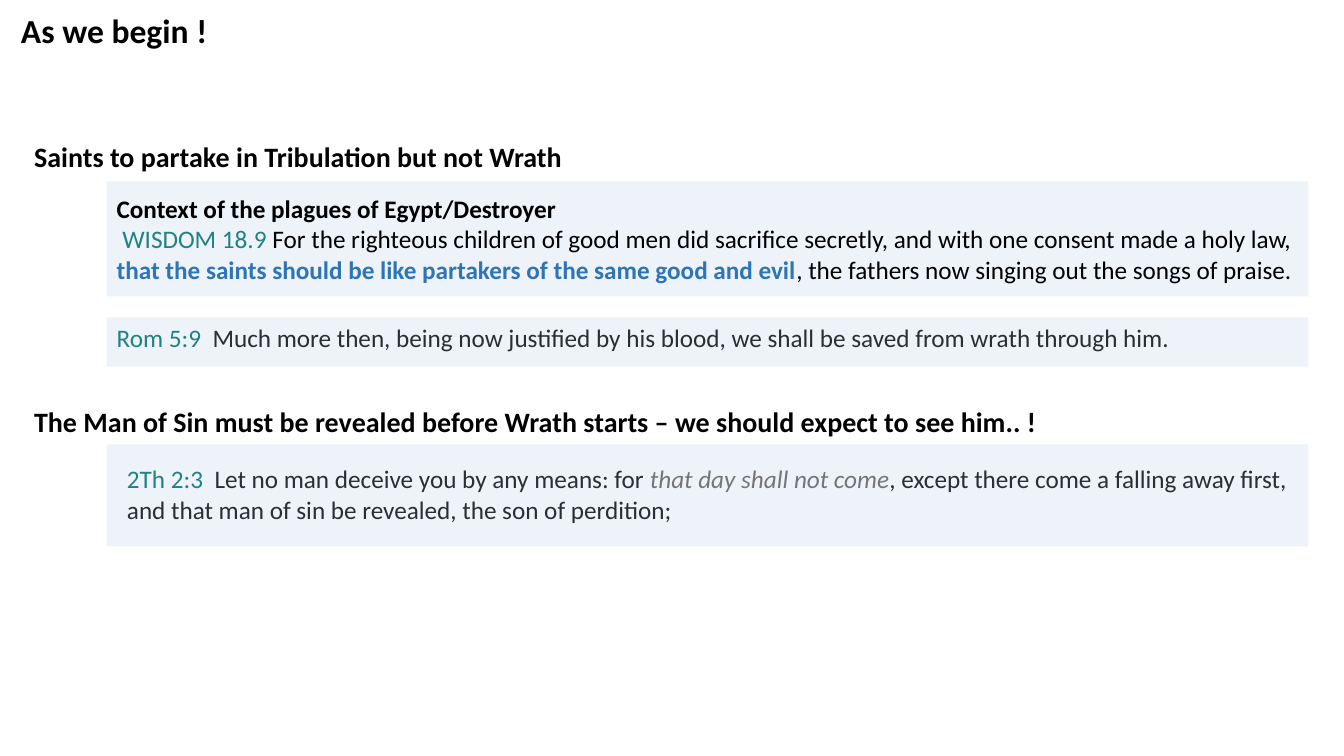
from pptx import Presentation
from pptx.dml.color import RGBColor
from pptx.enum.shapes import MSO_SHAPE
from pptx.util import Cm, Pt

RECT = MSO_SHAPE.RECTANGLE
FONT = "Calibri"
BLACK, TEAL, DARK = "000000", "218282", "292F33"
GREY, BLUE, PALE = "757575", "2E75B6", "EEF2F9"
BAND_LEFT, BAND_WIDTH = 2.69, 30.28


def color(code):
    return RGBColor.from_string(code)


def add_band(slide, top, height):
    """Pale panel behind a verse."""
    band = slide.shapes.add_shape(
        RECT, Cm(BAND_LEFT), Cm(top), Cm(BAND_WIDTH), Cm(height))
    band.shadow.inherit = False
    band.fill.solid()
    band.fill.fore_color.rgb = color(PALE)
    band.line.fill.background()


def add_run(para, text, size, code, bold=False, italic=False):
    run = para.add_run()
    run.text = text
    font = run.font
    font.name, font.size = FONT, Pt(size)
    font.bold, font.italic = bold, italic
    font.color.rgb = color(code)


def add_text(slide, left, top, width, height, lines, size=18, spacing=1.0):
    """Text box; each line is a list of (text, colour, bold, italic) runs."""
    box = slide.shapes.add_textbox(Cm(left), Cm(top), Cm(width), Cm(height))
    frame = box.text_frame
    frame.word_wrap = True
    for i, runs in enumerate(lines):
        para = frame.add_paragraph() if i else frame.paragraphs[0]
        para.line_spacing = spacing
        for text, *style in runs:
            add_run(para, text, size, *style)


def add_head(slide, top, width, text):
    add_text(slide, 0.61, top, width, 1.12, [[(text, BLACK, True)]], size=20)


def main():
    prs = Presentation()
    prs.slide_width, prs.slide_height = Cm(33.87), Cm(19.05)
    slide = prs.slides.add_slide(prs.slide_layouts[6])

    # Panels
    for top, height in ((8, 1.24), (4.57, 2.9), (11.2, 2.57)):
        add_band(slide, top, height)

    # Verses
    add_text(slide, BAND_LEFT, 8, 28.47, 1.02, [[
        ("Rom 5:9", TEAL),
        ("  Much more then, being now justified by his blood, "
         "we shall be saved from wrath through him. ", DARK),
    ]])
    add_text(slide, 2.95, 11.56, 30.02, 1.8, [[
        ("2Th 2:3", TEAL),
        ("  Let no man deceive you by any means: for ", DARK),
        ("that day shall not come", GREY, False, True),
        (", except there come a falling away first, "
         "and that man of sin be revealed, the son of perdition; ", DARK),
    ]])
    add_text(slide, BAND_LEFT, 4.75, BAND_WIDTH, 2.57, [
        [("Context of the plagues of Egypt/Destroyer", BLACK, True)],
        [
            (" WISDOM 18.9 ", TEAL),
            ("For the righteous children of good men did sacrifice secretly, "
             "and with one consent made a holy law, ", BLACK),
            ("that the saints should be like partakers "
             "of the same good and evil", BLUE, True),
            (", the fathers now singing out the songs of praise.", BLACK),
        ],
    ])

    # Headings
    add_head(slide, 3.4, 16.94,
             "Saints to partake in Tribulation but not Wrath")
    add_head(slide, 10.08, 26.92,
             "The Man of Sin must be revealed before Wrath starts "
             "– we should expect to see him.. !")

    # Title
    add_text(slide, 0.28, 0.25, 16.21, 1.57,
             [[("As we begin !", BLACK, True)]], size=24, spacing=0.9)

    prs.save("out.pptx")


if __name__ == "__main__":
    main()
